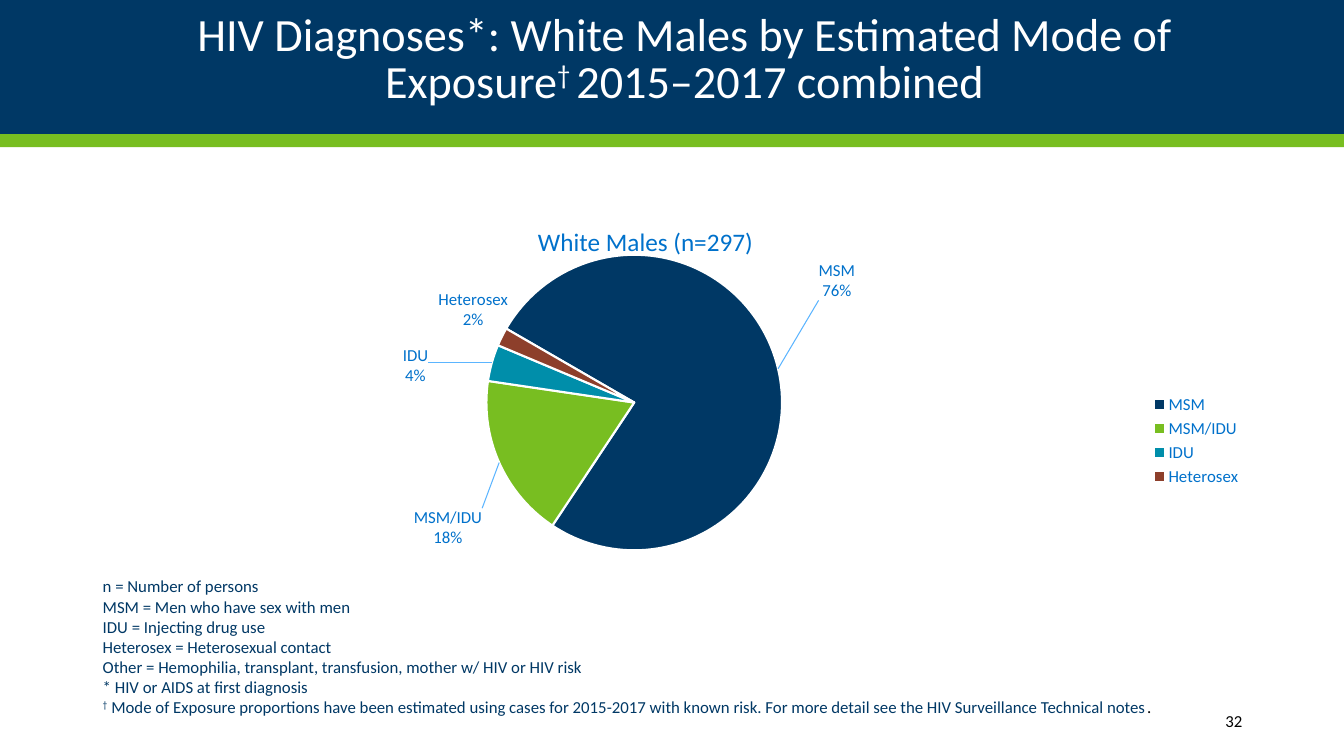
from dataclasses import dataclass

from lxml.etree import SubElement
from pptx import Presentation
from pptx.chart.data import CategoryChartData
from pptx.dml.color import RGBColor
from pptx.enum.chart import XL_CHART_TYPE, XL_LABEL_POSITION, XL_LEGEND_POSITION
from pptx.enum.shapes import MSO_SHAPE
from pptx.enum.text import MSO_ANCHOR, MSO_AUTO_SIZE, PP_ALIGN
from pptx.oxml import parse_xml
from pptx.oxml.ns import nsdecls, qn
from pptx.util import Inches, Pt


@dataclass(frozen=True)
class Theme:
    font: str = "Calibri"
    navy: RGBColor = RGBColor(0x00, 0x38, 0x65)
    green: RGBColor = RGBColor(0x78, 0xBE, 0x21)
    teal: RGBColor = RGBColor(0x00, 0x8E, 0xAA)
    rust: RGBColor = RGBColor(0x8D, 0x3F, 0x2B)
    blue: RGBColor = RGBColor(0x00, 0x71, 0xCB)
    white: RGBColor = RGBColor(0xFF, 0xFF, 0xFF)
    black: RGBColor = RGBColor(0x00, 0x00, 0x00)
    leader: str = "5BB5FF"
    title_size: Pt = Pt(33)
    chart_title_size: Pt = Pt(18)
    text_size: Pt = Pt(12)


THEME = Theme()


def set_font(font, size, color):
    font.name = THEME.font
    font.size = size
    font.color.rgb = color


def add_pieces(paragraph, *pieces):
    """Add one run per piece, raising every dagger to superscript."""
    for piece in pieces:
        run = paragraph.add_run()
        run.text = piece
        if piece.strip() == "†":
            run._r.get_or_add_rPr().set("baseline", "30000")


prs = Presentation()
prs.slide_width = Inches(13.33)
prs.slide_height = Inches(7.5)
slide = prs.slides.add_slide(prs.slide_layouts[5])

# Title over the header bands
title = slide.shapes.title
for top, height, color in ((0, 1.33, THEME.navy), (1.33, 0.13, THEME.green)):
    band = slide.shapes.add_shape(
        MSO_SHAPE.RECTANGLE, 0, Inches(top), prs.slide_width, Inches(height))
    band.shadow.inherit = False
    band.fill.solid()
    band.fill.fore_color.rgb = color
    band.line.fill.background()
    title.element.addprevious(band.element)

title.left, title.top = Inches(1.04), Inches(0.26)
title.width, title.height = Inches(11.5), Inches(1.21)
heading = title.text_frame
heading.auto_size = MSO_AUTO_SIZE.NONE
heading.vertical_anchor = MSO_ANCHOR.MIDDLE
heading.margin_top, heading.margin_bottom = 0, Inches(0.52)
heading_line = heading.paragraphs[0]
heading_line.alignment = PP_ALIGN.CENTER
heading_line.line_spacing = 0.85
set_font(heading_line.font, THEME.title_size, THEME.white)
add_pieces(heading_line, "HIV Diagnoses*: White Males by Estimated Mode of Exposure",
           "† ", "2015–2017 combined")

# Pie chart: name, share, colour, label offset as a fraction of the chart
exposures = [
    ("MSM", 76, THEME.navy, (0.03, -0.14)),
    ("MSM/IDU", 18, THEME.green, (-0.01, 0.09)),
    ("IDU", 4, THEME.teal, (-0.05, 0.05)),
    ("Heterosex", 2, THEME.rust, (0.01, -0.01)),
]
shares = CategoryChartData()
shares.categories = [name for name, *_ in exposures]
shares.add_series("Series 1", [share for _, share, *_ in exposures])
chart = slide.shapes.add_chart(
    XL_CHART_TYPE.PIE, Inches(0.92), Inches(1.99), Inches(11.5), Inches(4.76),
    shares).chart
set_font(chart.font, THEME.text_size, THEME.blue)

chart.has_title = True
chart_title = chart.chart_title
chart_title.include_in_layout = False
chart_title.text_frame.text = "White Males (n=297)"
chart_title_font = chart_title.text_frame.paragraphs[0].font
set_font(chart_title_font, THEME.chart_title_size, THEME.blue)
chart_title_font.bold = False

chart.has_legend = True
chart.legend.position = XL_LEGEND_POSITION.RIGHT
chart.legend.include_in_layout = False
set_font(chart.legend.font, THEME.text_size, THEME.blue)

pie = chart.plots[0]
pie.vary_by_categories = True
rotation = pie._element.find(qn("c:firstSliceAng"))
if rotation is None:
    rotation = SubElement(pie._element, qn("c:firstSliceAng"))
rotation.set("val", "300")

series = pie.series[0]
labels = series.data_labels
labels.show_value = False
labels.show_category_name = labels.show_percentage = True
labels.number_format = "0%"
labels.number_format_is_linked = False
labels.position = XL_LABEL_POSITION.OUTSIDE_END
set_font(labels.font, THEME.text_size, THEME.blue)

for index, (_, _, color, (dx, dy)) in enumerate(exposures):
    point = series.points[index]
    point.format.fill.solid()
    point.format.fill.fore_color.rgb = color
    point.format.line.color.rgb = THEME.white
    point.format.line.width = Pt(1.5)
    point.data_label.position = XL_LABEL_POSITION.OUTSIDE_END
    set_font(point.data_label.font, THEME.text_size, THEME.blue)
    label = labels._element.findall(qn("c:dLbl"))[index]
    for tag, shown in (("c:showVal", "0"), ("c:showCatName", "1"), ("c:showPercent", "1")):
        label.find(qn(tag)).set("val", shown)
    SubElement(label, qn("c:separator")).text = "\n"
    label.find(qn("c:idx")).addnext(parse_xml(
        f'<c:layout {nsdecls("c")}><c:manualLayout>'
        f'<c:x val="{dx}"/><c:y val="{dy}"/></c:manualLayout></c:layout>'))

leader_switch = labels._element.find(qn("c:showLeaderLines"))
if leader_switch is None:
    leader_switch = SubElement(labels._element, qn("c:showLeaderLines"))
leader_switch.set("val", "1")
separator = parse_xml(f'<c:separator {nsdecls("c")}>\n</c:separator>')
leader_switch.addprevious(separator)
leader_switch.addnext(parse_xml(
    f'<c:leaderLines {nsdecls("c", "a")}><c:spPr><a:ln w="9525"><a:solidFill>'
    f'<a:srgbClr val="{THEME.leader}"/></a:solidFill></a:ln></c:spPr></c:leaderLines>'))

# Fixed places of the pie and of the chart title
plot_area = chart._chartSpace.chart.plotArea
for old_layout in plot_area.findall(qn("c:layout")):
    plot_area.remove(old_layout)
plot_area.insert(0, parse_xml(
    f'<c:layout {nsdecls("c")}><c:manualLayout><c:layoutTarget val="inner"/>'
    '<c:xMode val="edge"/><c:yMode val="edge"/><c:x val="0.17"/><c:y val="0.113"/>'
    '<c:w val="0.594"/><c:h val="0.616"/></c:manualLayout></c:layout>'))
title_element = chart_title._element
for old_layout in title_element.findall(qn("c:layout")):
    title_element.remove(old_layout)
title_element.find(qn("c:tx")).addnext(parse_xml(
    f'<c:layout {nsdecls("c")}><c:manualLayout><c:xMode val="edge"/><c:yMode val="edge"/>'
    '<c:x val="0.38"/><c:y val="0.04"/></c:manualLayout></c:layout>'))

# Footnotes
footnotes = [
    ("n = Number of persons",),
    ("MSM = Men who have sex with men",),
    ("IDU = Injecting drug use",),
    ("Heterosex = Heterosexual contact",),
    ("Other = Hemophilia, transplant, transfusion, mother w/ HIV or HIV risk",),
    ("* HIV or AIDS at first diagnosis",),
    ("†", " Mode of Exposure proportions have been estimated using cases for 2015-2017 "
     "with known risk. For more detail see the HIV Surveillance Technical notes", "."),
]
notes = slide.shapes.add_textbox(
    Inches(0.92), Inches(5.28), Inches(11.41), Inches(2.07)).text_frame
notes.word_wrap = True
notes.vertical_anchor = MSO_ANCHOR.MIDDLE
notes.margin_top = Inches(0.25)
for index, pieces in enumerate(footnotes):
    note = notes.add_paragraph() if index else notes.paragraphs[0]
    set_font(note.font, THEME.text_size, THEME.navy)
    add_pieces(note, *pieces)
note.runs[-1].font.color.rgb = THEME.black

# Page number
page = slide.shapes.add_textbox(
    Inches(10.82), Inches(6.95), Inches(1.6), Inches(0.4)).text_frame
page.word_wrap = True
page.vertical_anchor = MSO_ANCHOR.MIDDLE
page_number = page.paragraphs[0]
page_number.text = "32"
page_number.alignment = PP_ALIGN.RIGHT
set_font(page_number.font, THEME.text_size, THEME.black)

prs.save("out.pptx")
